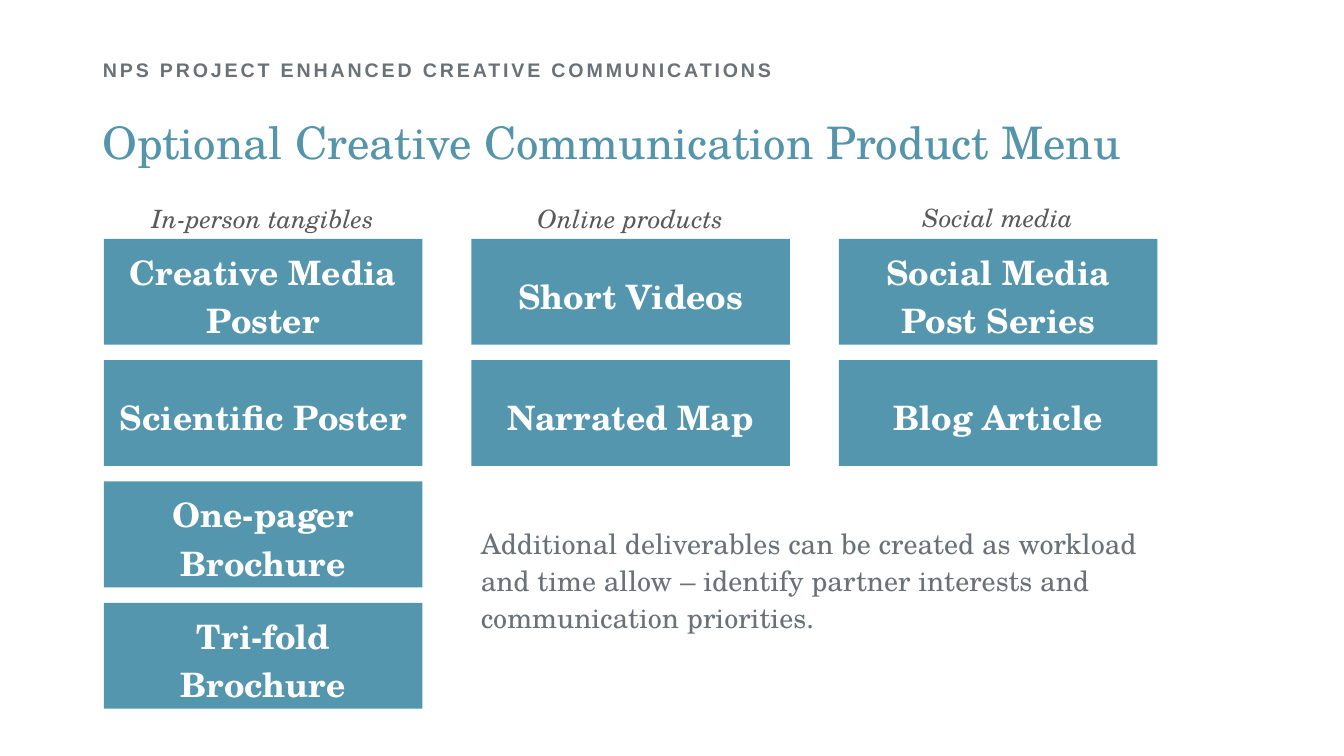
"""Build the slide with the menu of optional creative communication products."""
import pptx
import pptx.dml.color
import pptx.enum.shapes
import pptx.enum.text
import pptx.util

Inches = pptx.util.Inches
Pt = pptx.util.Pt
ALIGN = pptx.enum.text.PP_ALIGN
ANCHOR = pptx.enum.text.MSO_ANCHOR

SERIF = "TeX Gyre Schola"
COLORS = {
    "tile": "5496AD",
    "headline": "5595AC",
    "text": "6A7278",
    "heading": "595959",
    "white": "FFFFFF",
}
MENU = [
    ("In-person tangibles", 1.97, ["Creative Media Poster", "Scientific Poster",
                                   "One-pager Brochure", "Tri-fold Brochure"]),
    ("Online products", 1.97, ["Short Videos", "Narrated Map"]),
    ("Social media", 1.96, ["Social Media Post Series", "Blog Article"]),
]
FIRST_LEFT, LAST_LEFT = 1.03, 8.32
FIRST_TOP, LAST_TOP = 2.37, 5.98
TILE_WIDTH, TILE_HEIGHT = 3.16, 1.05
COLUMN_STEP = (LAST_LEFT - FIRST_LEFT) / 2
ROW_STEP = (LAST_TOP - FIRST_TOP) / 3


def rgb(name):
    return pptx.dml.color.RGBColor.from_string(COLORS[name])


def write(frame, text, size, color, font=SERIF, bold=False, italic=False,
          align=ALIGN.LEFT, anchor=ANCHOR.TOP, spacing=1.0, after=0):
    frame.word_wrap = True
    frame.auto_size = pptx.enum.text.MSO_AUTO_SIZE.NONE
    frame.vertical_anchor = anchor
    paragraph = frame.paragraphs[0]
    paragraph.alignment = align
    paragraph.line_spacing = spacing
    paragraph.space_before = Pt(0)
    paragraph.space_after = Pt(after)
    run = paragraph.add_run()
    run.text = text
    run.font.name = font
    run.font.size = Pt(size)
    run.font.bold = bold
    run.font.italic = italic
    run.font.color.rgb = rgb(color)
    return run


def add_title(slide, text):
    title = slide.shapes.title
    title.left, title.top = Inches(0.92), Inches(0.4)
    title.width, title.height = Inches(11.5), Inches(0.62)
    run = write(title.text_frame, text, 14, "text", font="Arial", bold=True,
                anchor=ANCHOR.MIDDLE, spacing=0.9)
    run.font._element.set("spc", "200")


def add_text(slide, text, left, top, width, height, size, color, **style):
    box = slide.shapes.add_textbox(Inches(left), Inches(top),
                                   Inches(width), Inches(height))
    write(box.text_frame, text, size, color, **style)


def add_tile(slide, text, left, top):
    tile = slide.shapes.add_shape(
        pptx.enum.shapes.MSO_SHAPE.RECTANGLE, Inches(left), Inches(top),
        Inches(TILE_WIDTH), Inches(TILE_HEIGHT))
    tile.shadow.inherit = False
    tile.fill.solid()
    tile.fill.fore_color.rgb = rgb("tile")
    tile.line.fill.background()
    write(tile.text_frame, text, 24, "white", bold=True, align=ALIGN.CENTER,
          anchor=ANCHOR.MIDDLE, spacing=1.2, after=6)


def add_menu(slide):
    for column, (heading, heading_top, products) in enumerate(MENU):
        left = FIRST_LEFT + column * COLUMN_STEP
        add_text(slide, heading, left, heading_top, 3.15, 0.4, 18, "heading",
                 italic=True, align=ALIGN.CENTER)
        for row, product in enumerate(products):
            add_tile(slide, product, left, FIRST_TOP + row * ROW_STEP)


def main():
    deck = pptx.Presentation()
    deck.slide_width, deck.slide_height = Inches(13.33), Inches(7.5)
    slide = deck.slides.add_slide(deck.slide_layouts.get_by_name("Title Only"))
    add_title(slide, "NPS PROJECT ENHANCED CREATIVE COMMUNICATIONS")
    add_text(slide, "Optional Creative Communication Product Menu",
             0.92, 0.95, 11.71, 0.9, 32, "headline", anchor=ANCHOR.MIDDLE)
    add_menu(slide)
    add_text(slide, "Additional deliverables can be created as workload and time "
             "allow – identify partner interests and communication priorities.",
             4.67, 5.14, 6.81, 1.98, 20, "text", spacing=1.1, after=12)
    deck.save("out.pptx")


if __name__ == "__main__":
    main()
